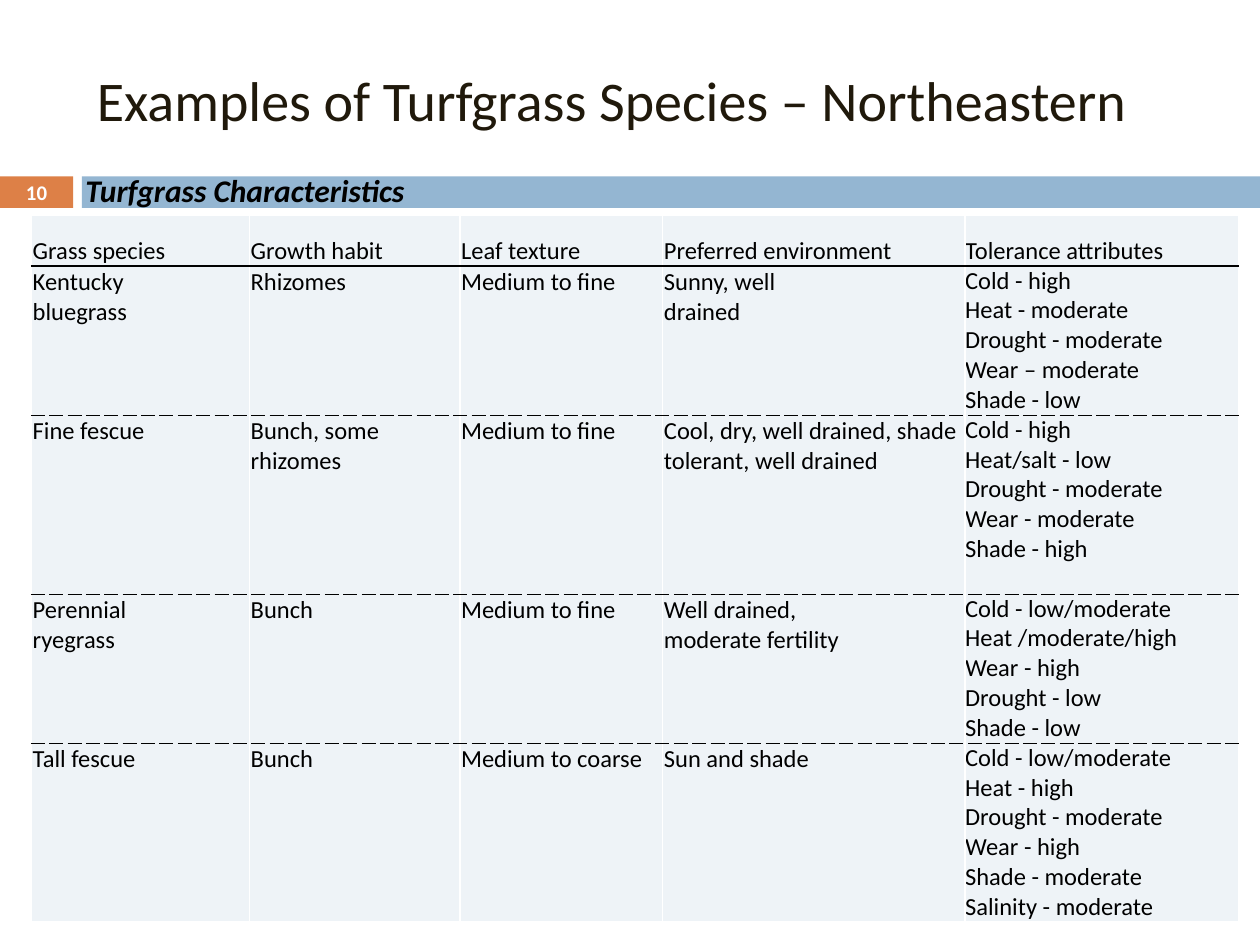
from dataclasses import dataclass

from lxml.etree import SubElement
from pptx import Presentation
from pptx.dml.color import RGBColor
from pptx.enum.shapes import MSO_SHAPE as Shape
from pptx.enum.text import MSO_ANCHOR as Anchor, MSO_AUTO_SIZE as AutoSize, PP_ALIGN as Align
from pptx.oxml.ns import qn
from pptx.util import Inches, Pt


@dataclass(frozen=True)
class Theme:
    font: str = "Calibri"
    title_size: float = 32
    heading_size: float = 18
    number_size: float = 11.9
    table_size: float = 14
    title: str = "20190B"
    ink: str = "000000"
    white: str = "FFFFFF"
    accent: str = "DD8047"
    band: str = "94B6D2"
    cell: str = "EEF3F7"


THEME = Theme()
WIDTH, HEIGHT = 10, 7.5
BAND_TOP, BAND_HEIGHT = 1.4, 0.25
BAND_LEFT, NUMBER_WIDTH = 0.65, 0.58

COLUMN_WIDTHS = [1.73, 1.67, 1.61, 2.4, 2.17]
ROW_HEIGHTS = [0.4, 0.92, 1.42, 1.12, 1.33]
TABLE_LEFT, TABLE_TOP, TABLE_HEIGHT = 0.25, 1.71, 5.55

# A line break inside a cell starts a new paragraph.
SPECIES = [
    ["Grass species", "Growth habit", "Leaf texture", "Preferred environment",
     "Tolerance attributes"],
    ["Kentucky\nbluegrass", "Rhizomes", "Medium to fine", "Sunny, well\ndrained",
     "Cold - high\nHeat - moderate\nDrought - moderate\nWear – moderate\nShade - low"],
    ["Fine fescue", "Bunch, some rhizomes", "Medium to fine",
     "Cool, dry, well drained, shade tolerant, well drained",
     "Cold - high\nHeat/salt - low\nDrought - moderate\nWear - moderate\nShade - high"],
    ["Perennial\nryegrass", "Bunch", "Medium to fine", "Well drained,\nmoderate fertility",
     "Cold - low/moderate\nHeat /moderate/high\nWear - high\nDrought - low\nShade - low"],
    ["Tall fescue", "Bunch", "Medium to coarse", "Sun and shade",
     "Cold - low/moderate\nHeat - high\nDrought - moderate\nWear - high\n"
     "Shade - moderate\nSalinity - moderate"],
]

# Color, width in points and dash of each kind of rule
SIDE_RULE = (THEME.white, 1, "solid")
HEADER_RULE = (THEME.ink, 1, "solid")
ROW_RULE = (THEME.ink, 0.25, "sysDash")


def write(frame, text, size, color, bold=None, italic=None, align=Align.LEFT):
    frame.text = text
    for para in frame.paragraphs:
        para.alignment = align
        for span in para.runs:
            font = span.font
            font.name, font.size = THEME.font, Pt(size)
            font.bold, font.italic = bold, italic
            font.color.rgb = RGBColor.from_string(color)


def add_bar(page, left, width, color):
    bar = page.shapes.add_shape(Shape.RECTANGLE, Inches(left), Inches(BAND_TOP),
                                Inches(width), Inches(BAND_HEIGHT))
    bar.shadow.inherit = False
    bar.fill.solid()
    bar.fill.fore_color.rgb = RGBColor.from_string(color)
    bar.line.fill.background()


def add_label(page, area, text, size, color, anchor=Anchor.MIDDLE, wrap=True, **style):
    box = page.shapes.add_textbox(*map(Inches, area))
    frame = box.text_frame
    frame.word_wrap = wrap
    frame.auto_size = AutoSize.NONE if wrap else AutoSize.SHAPE_TO_FIT_TEXT
    frame.vertical_anchor = anchor
    write(frame, text, size, color, **style)


def set_borders(cell, top, bottom):
    """Put the four edge lines ahead of the cell's fill, as the schema asks."""
    props = cell._tc.get_or_add_tcPr()
    edges = {"a:lnL": SIDE_RULE, "a:lnR": SIDE_RULE, "a:lnT": top, "a:lnB": bottom}
    for place, (tag, (color, width, dash)) in enumerate(edges.items()):
        line = SubElement(props, qn(tag), w=str(Pt(width)))
        fill = SubElement(line, qn("a:solidFill"))
        SubElement(fill, qn("a:srgbClr"), val=color)
        SubElement(line, qn("a:prstDash"), val=dash)
        props.insert(place, line)


def style_cell(cell, text, is_header, is_last_column):
    inset = Inches(0 if is_last_column else 0.01)
    cell.margin_left = cell.margin_right = cell.margin_top = inset
    cell.margin_bottom = 0
    cell.vertical_anchor = Anchor.BOTTOM if is_header else Anchor.TOP
    cell.fill.solid()
    cell.fill.fore_color.rgb = RGBColor.from_string(THEME.cell)
    write(cell.text_frame, text, THEME.table_size, THEME.ink, bold=False)


def add_species_table(page):
    frame = page.shapes.add_table(
        len(ROW_HEIGHTS), len(COLUMN_WIDTHS), Inches(TABLE_LEFT), Inches(TABLE_TOP),
        Inches(sum(COLUMN_WIDTHS)), Inches(TABLE_HEIGHT))
    table = frame.table
    table.first_row = table.horz_banding = False
    for column, width in zip(table.columns, COLUMN_WIDTHS):
        column.width = Inches(width)
    for row, height in zip(table.rows, ROW_HEIGHTS):
        row.height = Inches(height)

    inner_rules = [ROW_RULE] * (len(SPECIES) - 2)
    rules = [SIDE_RULE, HEADER_RULE, *inner_rules, SIDE_RULE]
    last_column = len(COLUMN_WIDTHS) - 1
    for r, texts in enumerate(SPECIES):
        for c, text in enumerate(texts):
            cell = table.cell(r, c)
            style_cell(cell, text, r == 0, c == last_column)
            set_borders(cell, rules[r], rules[r + 1])


def main():
    deck = Presentation()
    deck.slide_width, deck.slide_height = Inches(WIDTH), Inches(HEIGHT)
    page = deck.slides.add_slide(deck.slide_layouts[6])

    add_bar(page, 0, NUMBER_WIDTH, THEME.accent)
    add_bar(page, BAND_LEFT, WIDTH - BAND_LEFT, THEME.band)
    add_label(page, (0.67, 0.25, 8.92, 1.08), "Examples of Turfgrass Species – Northeastern",
              THEME.title_size, THEME.title)
    add_label(page, (0, 1.39, NUMBER_WIDTH, 0.27), "10", THEME.number_size, THEME.white,
              bold=True, align=Align.CENTER)
    add_species_table(page)
    add_label(page, (NUMBER_WIDTH, 1.31, 2.85, 0.4), "Turfgrass Characteristics",
              THEME.heading_size, THEME.ink, anchor=Anchor.TOP, wrap=False,
              bold=True, italic=True)
    deck.save("out.pptx")


if __name__ == "__main__":
    main()
